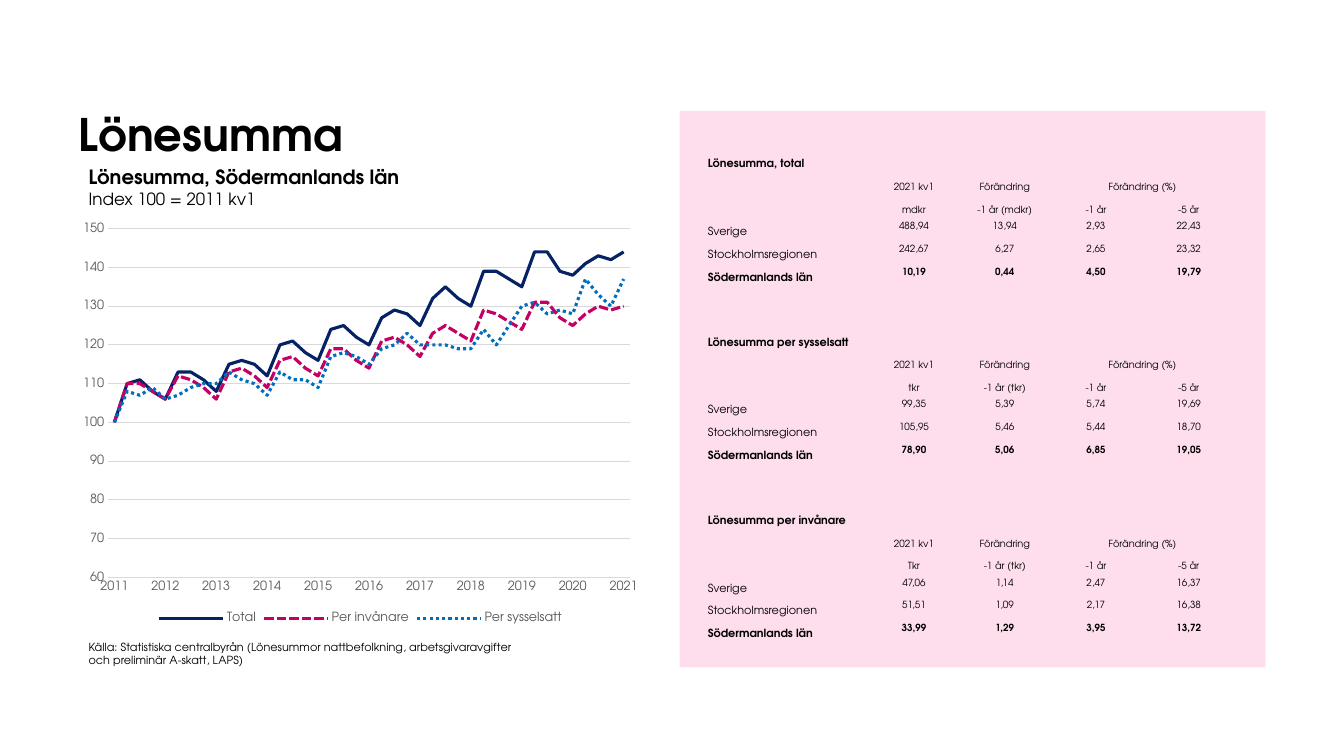
from typing import NamedTuple

from pptx import Presentation
from pptx.chart.data import CategoryChartData
from pptx.dml.color import RGBColor
from pptx.enum.chart import XL_CHART_TYPE, XL_LEGEND_POSITION, XL_MARKER_STYLE, XL_TICK_MARK
from pptx.enum.dml import MSO_LINE
from pptx.enum.shapes import MSO_SHAPE
from pptx.enum.text import MSO_ANCHOR, MSO_AUTO_SIZE, PP_ALIGN
from pptx.oxml import parse_xml
from pptx.oxml.ns import nsdecls, qn
from pptx.util import Inches, Pt

LINE_CHART, LEGEND_BOTTOM = XL_CHART_TYPE.LINE, XL_LEGEND_POSITION.BOTTOM
NO_MARKER, NO_TICK = XL_MARKER_STYLE.NONE, XL_TICK_MARK.NONE
DASH, DOT = MSO_LINE.SQUARE_DOT, MSO_LINE.ROUND_DOT
LEFT, CENTER = PP_ALIGN.LEFT, PP_ALIGN.CENTER
TOP, MIDDLE, BOTTOM = MSO_ANCHOR.TOP, MSO_ANCHOR.MIDDLE, MSO_ANCHOR.BOTTOM
FIXED_SIZE, GROW = MSO_AUTO_SIZE.NONE, MSO_AUTO_SIZE.SHAPE_TO_FIT_TEXT
RECTANGLE = MSO_SHAPE.RECTANGLE

FONT = "TeX Gyre Adventor"
BLACK, GRAY, LIGHT_GRAY, PINK = "000000", "595959", "D9D9D9", "FEDEED"
NAVY, MAGENTA, BLUE = "052364", "C40064", "006EBF"
WIDTH, HEIGHT = Inches(13.33), Inches(7.5)
PLAIN_TABLE_STYLE = "{2D5ABB26-0587-4C30-8999-92F81FD0307C}"


class Box(NamedTuple):
    """Position and size in percent of the slide."""
    left: float
    top: float
    width: float
    height: float


class WageTable(NamedTuple):
    title: str
    unit: str
    change_unit: str
    values: list[str]


class WageSeries(NamedTuple):
    name: str
    color: str
    dash: MSO_LINE | None
    values: list[int]


PANEL = Box(50.56, 14.67, 43.59, 73.6)
TITLE = Box(5.85, 4.93, 69.17, 16.27)
SUBTITLE = Box(5.85, 21.2, 43.51, 7.2)
CHART = Box(5.33, 28.4, 42.99, 54.67)
SOURCE = Box(5.85, 84, 33.08, 4.93)
TABLE = Box(52.59, 19.47, 39.31, 65.2)
COLUMN_SHARES = [12, 6.83, 6.68, 6.9, 6.9]
ROW_SHARE, LATER_TITLE_SHARE = 3, 5.6
ROWS_PER_TABLE = 7  # six rows of content and one empty row between the tables

REGIONS = ["Sverige", "Stockholmsregionen", "Södermanlands län"]
TABLES = [
    WageTable("Lönesumma, total", "mdkr", "-1 år (mdkr)",
              ["488,94 13,94 2,93 22,43", "242,67 6,27 2,65 23,32", "10,19 0,44 4,50 19,79"]),
    WageTable("Lönesumma per sysselsatt", "tkr", "-1 år (tkr)",
              ["99,35 5,39 5,74 19,69", "105,95 5,46 5,44 18,70", "78,90 5,06 6,85 19,05"]),
    WageTable("Lönesumma per invånare", "Tkr", "-1 år (tkr)",
              ["47,06 1,14 2,47 16,37", "51,51 1,09 2,17 16,38", "33,99 1,29 3,95 13,72"]),
]
SERIES = [
    WageSeries("Total", NAVY, None, [
        100, 110, 111, 108, 106, 113, 113, 111, 108, 115, 116, 115, 112, 120, 121, 118, 116, 124, 125, 122, 120,
        127, 129, 128, 125, 132, 135, 132, 130, 139, 139, 137, 135, 144, 144, 139, 138, 141, 143, 142, 144]),
    WageSeries("Per invånare", MAGENTA, DASH, [
        100, 110, 110, 108, 106, 112, 111, 109, 106, 113, 114, 112, 109, 116, 117, 114, 112, 119, 119, 116, 114,
        121, 122, 120, 117, 123, 125, 123, 121, 129, 128, 126, 124, 131, 131, 127, 125, 128, 130, 129, 130]),
    WageSeries("Per sysselsatt", BLUE, DOT, [
        100, 108, 107, 109, 106, 107, 109, 110, 110, 113, 111, 110, 107, 113, 111, 111, 109, 117, 118, 117, 115,
        119, 120, 123, 120, 120, 120, 119, 119, 124, 120, 125, 130, 131, 128, 129, 128, 137, 133, 130, 137]),
]


def color(value: str) -> RGBColor:
    return RGBColor.from_string(value)


def across(share: float) -> int:
    return round(WIDTH * share / 100)


def down(share: float) -> int:
    return round(HEIGHT * share / 100)


def place(box: Box) -> tuple[int, int, int, int]:
    return across(box.left), down(box.top), across(box.width), down(box.height)


def set_font(font, size: float, value: str = BLACK, bold: bool = False) -> None:
    font.name, font.size, font.bold = FONT, Pt(size), bold
    font.color.rgb = color(value)


def write_text(paragraph, text: str, *, size: float, bold: bool = False, align: PP_ALIGN = LEFT) -> None:
    """Append a formatted run; an empty text only sets the height of the line."""
    paragraph.alignment = align
    if text:
        run = paragraph.add_run()
        run.text = text
        set_font(run.font, size, bold=bold)
    else:
        paragraph._p.append(parse_xml(f'<a:endParaRPr {nsdecls("a")} sz="{size * 100}"/>'))


def add_text_box(slide, box: Box):
    frame = slide.shapes.add_textbox(*place(box)).text_frame
    frame.word_wrap = True
    frame.auto_size = GROW
    return frame.paragraphs[0]


def add_title(slide) -> None:
    title = slide.shapes.title
    title.left, title.top, title.width, title.height = place(TITLE)
    frame = title.text_frame
    frame.margin_left = frame.margin_right = frame.margin_top = frame.margin_bottom = 0
    frame.vertical_anchor, frame.auto_size = BOTTOM, FIXED_SIZE
    write_text(frame.paragraphs[0], "Lönesumma", size=32, bold=True)


def add_panel(slide) -> None:
    panel = slide.shapes.add_shape(RECTANGLE, *place(PANEL))
    panel.shadow.inherit = False
    panel.fill.solid()
    panel.fill.fore_color.rgb = color(PINK)
    panel.line.fill.background()


def table_rows() -> list[list[str]]:
    rows = []
    for wages in TABLES:
        rows += [[wages.title, "", "", "", ""],
                 ["", "2021 kv1", "Förändring", "Förändring (%)", ""],
                 ["", wages.unit, wages.change_unit, "-1 år", "-5 år"]]
        rows += [[region, *values.split()] for region, values in zip(REGIONS, wages.values)]
        rows.append([""] * len(COLUMN_SHARES))
    return rows[:-1]


def add_wage_tables(slide) -> None:
    rows = table_rows()
    table = slide.shapes.add_table(len(rows), len(COLUMN_SHARES), *place(TABLE)).table
    table.first_row = table.horz_banding = False
    table._tbl.tblPr.find(qn("a:tableStyleId")).text = PLAIN_TABLE_STYLE
    for column, share in zip(table.columns, COLUMN_SHARES):
        column.width = across(share)
    for row_index, texts in enumerate(rows):
        part = row_index % ROWS_PER_TABLE
        is_later_title = part == 0 and row_index > 0
        table.rows[row_index].height = down(LATER_TITLE_SHARE if is_later_title else ROW_SHARE)
        for column_index, text in enumerate(texts):
            cell = table.cell(row_index, column_index)
            is_label = column_index == 0
            cell.fill.background()
            cell.margin_left = cell.margin_right = cell.margin_top = Inches(0.01)
            cell.margin_bottom = 0
            cell.vertical_anchor = BOTTOM if is_label or part < 3 else MIDDLE
            write_text(cell.text_frame.paragraphs[0], text, size=8 if is_label else 7,
                       bold=part in (0, 5), align=LEFT if is_label else CENTER)
        if part == 1 or row_index == 0:
            table.cell(row_index, 3).merge(table.cell(row_index, 4))


def add_wage_chart(slide) -> None:
    data = CategoryChartData()
    quarters = range(len(SERIES[0].values))
    data.categories = ["" if quarter % 4 else str(2011 + quarter // 4) for quarter in quarters]
    for wages in SERIES:
        data.add_series(wages.name, wages.values)
    chart = slide.shapes.add_chart(LINE_CHART, *place(CHART), data).chart
    set_font(chart.font, 10)
    chart.has_title = False
    chart.has_legend = True
    chart.legend.position, chart.legend.include_in_layout = LEGEND_BOTTOM, False
    set_font(chart.legend.font, 9, GRAY)

    years, index = chart.category_axis, chart.value_axis
    for axis in (years, index):
        axis.major_tick_mark = axis.minor_tick_mark = NO_TICK
        set_font(axis.tick_labels.font, 9, GRAY)
    index.minimum_scale, index.maximum_scale, index.major_unit = 60, 150, 10
    index.format.line.fill.background()
    for line in (years.format.line, index.major_gridlines.format.line):
        line.color.rgb, line.width = color(LIGHT_GRAY), Pt(0.75)

    chart.plots[0].vary_by_categories = False
    for series, wages in zip(chart.plots[0].series, SERIES):
        series.smooth = False
        series.marker.style = NO_MARKER
        line = series.format.line
        line.color.rgb, line.width = color(wages.color), Pt(2.25)
        if wages.dash:
            line.dash_style = wages.dash


def main() -> None:
    presentation = Presentation()
    presentation.slide_width, presentation.slide_height = WIDTH, HEIGHT
    slide = presentation.slides.add_slide(presentation.slide_layouts[5])
    add_panel(slide)
    add_title(slide)
    write_text(add_text_box(slide, SOURCE), "Källa: Statistiska centralbyrån (Lönesummor nattbefolkning, "
               "arbetsgivaravgifter och preliminär A-skatt, LAPS)", size=8)
    subtitle = add_text_box(slide, SUBTITLE)
    write_text(subtitle, "Lönesumma, Södermanlands län", size=14, bold=True)
    subtitle.add_line_break()
    write_text(subtitle, "Index 100 = 2011 kv1", size=12)
    add_wage_tables(slide)
    add_wage_chart(slide)
    presentation.save("out.pptx")


if __name__ == "__main__":
    main()
